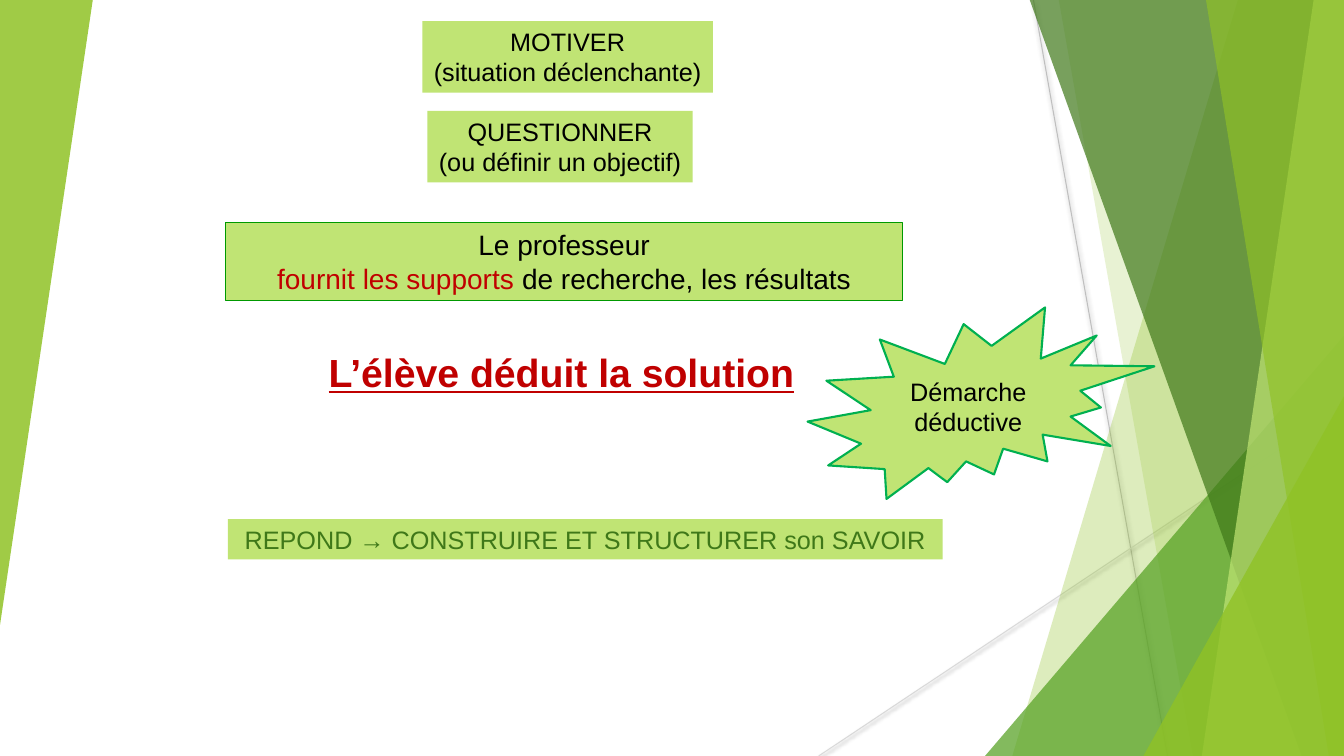
from lxml import etree
from pptx import Presentation
from pptx.dml.color import RGBColor
from pptx.enum.shapes import MSO_CONNECTOR, MSO_SHAPE as SHAPE
from pptx.enum.text import MSO_ANCHOR as ANCHOR, PP_ALIGN as ALIGN
from pptx.oxml.ns import qn
from pptx.util import Inches, Pt

LIME = RGBColor(0xC0, 0xE4, 0x74)
GREEN = RGBColor(0x90, 0xC2, 0x26)
MID_GREEN = RGBColor(0x54, 0xA0, 0x21)
DARK_GREEN = RGBColor(0x3F, 0x78, 0x19)
SEAL_LINE = RGBColor(0x00, 0xB0, 0x50)
BOX_LINE = RGBColor(0x00, 0x99, 0x00)
RED = RGBColor(0xC0, 0x00, 0x00)
BLACK = RGBColor(0x00, 0x00, 0x00)
GREY = RGBColor(0xBF, 0xBF, 0xBF)
LIGHT_GREY = RGBColor(0xD9, 0xD9, 0xD9)

W, H = 13.33, 7.5

prs = Presentation()
prs.slide_width, prs.slide_height = Inches(W), Inches(H)
slide = prs.slides.add_slide(prs.slide_layouts[6])
shapes = slide.shapes


def paint(sp, color, opacity=100):
    """Flat fill without outline or shadow; opacity in percent."""
    sp.shadow.inherit = False
    sp.line.fill.background()
    sp.fill.solid()
    sp.fill.fore_color.rgb = color
    if opacity < 100:
        clr = sp.fill._xPr.find(qn("a:solidFill"))[0]
        etree.SubElement(clr, qn("a:alpha"), val=str(opacity * 1000))


def add_text(lines, at, kind=SHAPE.RECTANGLE, fill=LIME, line=None, width=0.75,
             size=18, color=BLACK, bold=None, underline=None, align=ALIGN.CENTER,
             anchor=ANCHOR.TOP, wrap=False):
    """Text in a shape, or in a text box if kind is None.

    Each line is a list of (text, color) runs or a plain string.
    """
    box = [Inches(v) for v in at]
    if kind is None:
        sp = shapes.add_textbox(*box)
    else:
        sp = shapes.add_shape(kind, *box)
        paint(sp, fill)
    if line is not None:
        sp.line.color.rgb = line
        sp.line.width = Pt(width)
    tf = sp.text_frame
    tf.word_wrap = wrap
    tf.vertical_anchor = anchor
    for i, runs in enumerate(lines):
        p = tf.add_paragraph() if i else tf.paragraphs[0]
        p.alignment = align
        for text, run_color in [(runs, color)] if isinstance(runs, str) else runs:
            r = p.add_run()
            r.text = text
            r.font.name = "Arial"
            r.font.size = Pt(size)
            r.font.bold = bold
            r.font.underline = underline
            r.font.color.rgb = run_color


# Thin background lines with a soft shadow
for x1, y1, x2, y2, color in [(10.25, 0, 11.58, H, GREY),
                              (W, 4.03, 8.12, H, LIGHT_GREY)]:
    ln = shapes.add_connector(MSO_CONNECTOR.STRAIGHT,
                              *[Inches(v) for v in (x1, y1, x2, y2)])
    ln.line.color.rgb = color
    ln.line.width = Pt(0.75)
    effects = etree.SubElement(ln._element.spPr, qn("a:effectLst"))
    shadow = etree.SubElement(effects, qn("a:outerShdw"), blurRad=str(Pt(3.1)),
                              dist=str(Pt(1.6)), dir="5400000", rotWithShape="0")
    black = etree.SubElement(shadow, qn("a:srgbClr"), val="000000")
    etree.SubElement(black, qn("a:alpha"), val="38000")

# Translucent facets: bands slanting from top to bottom along the right edge,
# and right triangles given by their box
BAND, TRIANGLE = "band", "triangle"
facets = [
    (BAND, (12.28, 10.04), GREEN, 30),
    (BAND, (10.5, 11.83), GREEN, 20),
    (TRIANGLE, (9.77, 3.33, 3.56, 4.17), MID_GREEN, 72),
    (BAND, (10.21, 12.91), DARK_GREEN, 70),
    (BAND, (13.03, 11.92), LIME, 70),
    (BAND, (11.96, 13.18), GREEN, 65),
    (TRIANGLE, (11.34, 3.93, 1.99, 3.57), GREEN, 80),
    (TRIANGLE, (0, 0, 0.92, 6.2), GREEN, 85),
]
for kind, place, color, opacity in facets:
    if kind == BAND:
        top, bottom = place
        fb = shapes.build_freeform(Inches(top), Inches(-0.01))
        fb.add_line_segments([(Inches(x), Inches(y)) for x, y in
                              [(W, -0.01), (W, H), (bottom, H)]], close=True)
        sp = fb.convert_to_shape()
    else:
        sp = shapes.add_shape(SHAPE.ISOSCELES_TRIANGLE, *[Inches(v) for v in place])
        sp.adjustments[0] = 1
        if place[0] == 0:
            sp.rotation = 180
    paint(sp, color, opacity)

# Steps of the approach
add_text(["MOTIVER", "(situation déclenchante)"], (4.19, 0.21, 2.88, 0.71))
add_text(["QUESTIONNER", "(ou définir un objectif)"], (4.24, 1.1, 2.63, 0.71))
add_text(["REPOND → CONSTRUIRE ET STRUCTURER son SAVOIR"],
         (2.26, 5.15, 7.09, 0.4), color=DARK_GREEN)

# Starburst label
add_text(["Démarche déductive"], (8.01, 3.05, 3.44, 1.9), kind=SHAPE.EXPLOSION2,
         line=SEAL_LINE, width=1.5, anchor=ANCHOR.MIDDLE, wrap=True)

# Teacher's role and pupil's conclusion
add_text(["Le professeur",
          [("fournit les supports ", RED), ("de recherche, les résultats", BLACK)]],
         (2.24, 2.21, 6.71, 0.77), line=BOX_LINE, size=20, wrap=True)
add_text(["L’élève déduit la solution"], (3.16, 3.41, 4.88, 0.57), kind=None,
         size=28, color=RED, bold=True, underline=True, align=ALIGN.LEFT)

prs.save("out.pptx")
